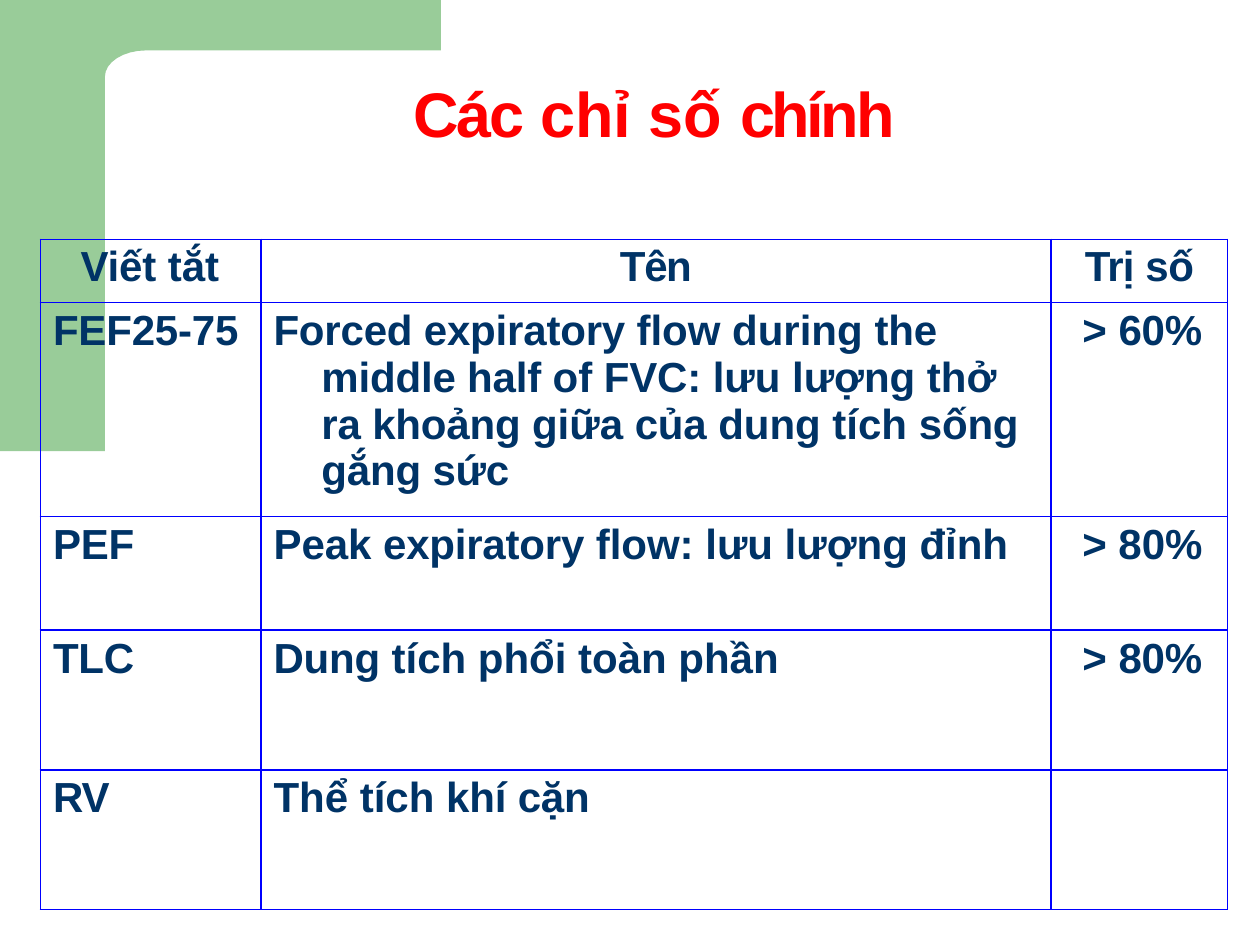
from math import cos, pi, sin

from lxml.etree import SubElement
from pptx import Presentation
from pptx.dml.color import RGBColor
from pptx.enum.text import MSO_ANCHOR, MSO_AUTO_SIZE, PP_ALIGN
from pptx.oxml.ns import qn
from pptx.util import Pt

COLORS = {"corner": "99CC99", "title": "FF0000", "text": "003366", "border": "0000FF"}
FONT = "Arial"
EDGES = ("L", "R", "T", "B")

# Each run is (text, character spacing in points)
TITLE = [("Các ", -1.1), ("chỉ ", -0.1), ("số ", 0.1), ("chính", -1.9)]
ROWS = [
    [[("Viết ", -0.1), ("tắt", 0)], [("Tên", -0.8)], [("Trị ", -0.5), ("số", -0.1)]],
    [[("FEF25-75", -0.1)],
     [("Forced expiratory ", -0.1), ("flow during ", 0), ("the middle half ", -0.1),
      ("of ", 0), ("FVC: ", -0.1), ("lưu lượng thở ", 0), ("ra khoảng ", -0.1),
      ("giữa ", 0), ("của ", -0.1), ("dung tích ", 0), ("sống gắng sức", -0.1)],
     [("> ", 0), ("60%", -0.1)]],
    [[("PEF", -0.1)],
     [("Peak", 0), (" expiratory ", -0.1), ("flow: lưu lượng đỉnh", 0)],
     [("> 80%", 0)]],
    [[("TLC", -0.1)],
     [("Dung ", -0.1), ("tích phổi toàn phần", 0)],
     [("> ", 0), ("80%", -0.1)]],
    [[("RV", -0.6)], [("Thể tích ", 0), ("khí cặn", -0.1)], []],
]
COLUMN_WIDTHS = [24.5, 126, 451.4, 100.8]
ROW_HEIGHTS = [36, 122.4, 64.8, 79.9, 79.9]
SPACE_BEFORE = [2.5, 2.5, 2.8, 2.8, 3]
HEADER_INDENTS = [23, 0, 19.5]
BODY_INDENTS = [7.2, 7.2, 18]


def rgb(name):
    return RGBColor.from_string(COLORS[name])


def add_runs(paragraph, runs, size, color):
    for text, spacing in runs:
        run = paragraph.add_run()
        run.text = text
        run.font.name = FONT
        run.font.size = Pt(size)
        run.font.bold = True
        run.font.color.rgb = rgb(color)
        run.font._element.set("spc", str(round(spacing * 100)))


def set_indent(paragraph, left, first_line=0):
    properties = paragraph._p.get_or_add_pPr()
    properties.set("marL", str(Pt(left)))
    properties.set("indent", str(Pt(first_line)))


def set_borders(cell, edges):
    properties = cell._tc.get_or_add_tcPr()
    for edge in EDGES:
        line = SubElement(properties, qn(f"a:ln{edge}"), w=str(Pt(1)))
        if edge in edges:
            fill = SubElement(line, qn("a:solidFill"))
            SubElement(fill, qn("a:srgbClr"), val=COLORS["border"])
        else:
            SubElement(line, qn("a:noFill"))


def add_corner(slide, left, top, width, height):
    """Green L-shaped band with a rounded inner corner."""
    side, band, radius_x, radius_y = 60, 28.8, 23.5, 15
    steps = 8
    angles = [pi / 2 * step / steps for step in range(steps + 1)]
    arc = [(side + radius_x * (1 - cos(angle)), band + radius_y * (1 - sin(angle)))
           for angle in angles]
    points = [(0, 0), (0, height), (side, height), *arc, (width, band), (width, 0)]
    points = [(Pt(left + x), Pt(top + y)) for x, y in points]
    builder = slide.shapes.build_freeform(*points[0])
    builder.add_line_segments(points[1:], close=True)
    shape = builder.convert_to_shape()
    shape.shadow.inherit = False
    shape.fill.solid()
    shape.fill.fore_color.rgb = rgb("corner")
    shape.line.fill.background()
    # Behind the title
    slide.shapes._spTree.insert(2, shape._element)


def place_title(slide, left, top, width, height):
    title = slide.shapes.title
    title.left, title.top, title.width, title.height = map(Pt, (left, top, width, height))
    frame = title.text_frame
    frame.margin_left = frame.margin_right = frame.margin_bottom = 0
    frame.margin_top = Pt(0.7)
    frame.vertical_anchor = MSO_ANCHOR.TOP
    frame.word_wrap = True
    frame.auto_size = MSO_AUTO_SIZE.SHAPE_TO_FIT_TEXT
    paragraph = frame.paragraphs[0]
    paragraph.alignment = PP_ALIGN.LEFT
    paragraph.line_spacing = 1.0
    paragraph.space_before = Pt(1)
    set_indent(paragraph, 0.7)
    add_runs(paragraph, TITLE, 36, "title")


def fill_cell(cell, runs, row, column):
    cell.margin_left = cell.margin_bottom = 0
    # The right margin keeps the long description to four lines
    cell.margin_right = Pt(6) if (row, column) == (1, 1) else 0
    cell.margin_top = Pt(2.9 if row else 2.2)
    paragraph = cell.text_frame.paragraphs[0]
    paragraph.space_before = Pt(SPACE_BEFORE[row])
    if (row, column) == (0, 1):
        paragraph.alignment = PP_ALIGN.CENTER
    if (row, column) == (1, 1):
        set_indent(paragraph, 34.6, -27.4)
    else:
        set_indent(paragraph, (BODY_INDENTS if row else HEADER_INDENTS)[column])
    add_runs(paragraph, runs, 24, "text")


def add_index_table(slide, left, top, width, height):
    frame = slide.shapes.add_table(len(ROW_HEIGHTS), len(COLUMN_WIDTHS),
                                   Pt(left), Pt(top), Pt(width), Pt(height))
    table = frame.table
    table.first_row = table.horz_banding = False
    for column, column_width in zip(table.columns, COLUMN_WIDTHS):
        column.width = Pt(column_width)
    for row, row_height in zip(table.rows, ROW_HEIGHTS):
        row.height = Pt(row_height)

    # Empty margin column, bordered on its right only
    table.cell(0, 0).merge(table.cell(len(ROW_HEIGHTS) - 1, 0))
    for row, texts in enumerate(ROWS):
        set_borders(table.cell(row, 0), ("R",))
        table.cell(row, 0).fill.background()
        for column, runs in enumerate(texts):
            cell = table.cell(row, column + 1)
            set_borders(cell, EDGES)
            cell.fill.background()
            fill_cell(cell, runs, row, column)


def main():
    presentation = Presentation()
    presentation.slide_width, presentation.slide_height = Pt(720), Pt(540)
    slide = presentation.slides.add_slide(presentation.slide_layouts[5])
    add_corner(slide, 0, 0, 252, 257.8)
    place_title(slide, 235.4, 41.8, 277.9, 45.4)
    add_index_table(slide, -1.4, 136.8, sum(COLUMN_WIDTHS), sum(ROW_HEIGHTS))
    presentation.save("out.pptx")


if __name__ == "__main__":
    main()
